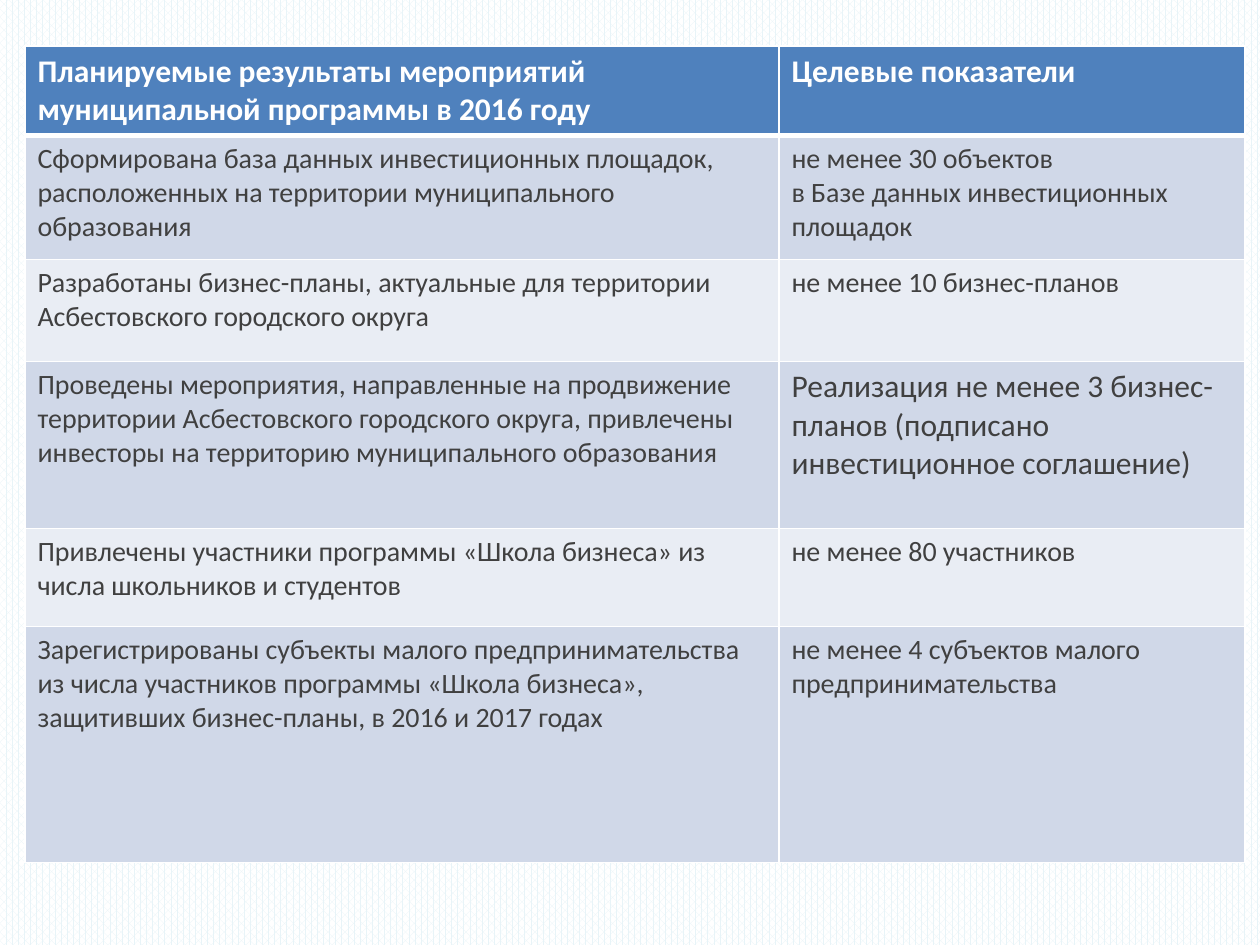
import lxml.etree
import pptx
import pptx.dml.color
import pptx.enum.dml
import pptx.oxml.ns
import pptx.util

EMU_PER_PX = 914400 / 126
SLIDE_WIDTH, SLIDE_HEIGHT = 1260, 945
FONT = "Calibri"
WHITE, HEADER_BLUE, TEXT_GREY = "FFFFFF", "4F81BD", "404040"
BANDS = ("D0D8E8", "E9EDF4")

COLUMN_WIDTHS = (754, 466)
HEADERS = (
    "Планируемые результаты мероприятий муниципальной программы в 2016 году",
    "Целевые показатели",
)
HEADER_HEIGHT = 88

# Row height, planned result, paragraphs of the target, target text size
RESULTS = (
    (124, "Сформирована база данных инвестиционных площадок, расположенных "
          "на территории муниципального образования",
     ("не менее 30 объектов", "в Базе данных инвестиционных площадок"), 16),
    (102, "Разработаны бизнес-планы, актуальные для территории "
          "Асбестовского городского округа",
     ("не менее 10 бизнес-планов",), 16),
    (167, "Проведены мероприятия, направленные на продвижение территории "
          "Асбестовского городского округа, привлечены инвесторы "
          "на территорию муниципального образования",
     ("Реализация не менее 3 бизнес-планов "
      "(подписано инвестиционное соглашение)",), 18),
    (98, "Привлечены участники программы «Школа бизнеса» "
         "из числа школьников и студентов",
     ("не менее 80 участников",), 16),
    (236, "Зарегистрированы субъекты малого предпринимательства "
          "из числа участников программы «Школа бизнеса», "
          "защитивших бизнес-планы, в 2016 и 2017 годах",
     ("не менее 4 субъектов малого предпринимательства",), 16),
)


def px(length):
    return pptx.util.Emu(round(length * EMU_PER_PX))


def color(hex_string):
    return pptx.dml.color.RGBColor.from_string(hex_string)


def set_borders(cell, top=1, bottom=1):
    """Draw white cell borders, with widths in points."""
    properties = cell._tc.get_or_add_tcPr()
    for side, width in (("L", 1), ("R", 1), ("T", top), ("B", bottom)):
        line = lxml.etree.SubElement(
            properties, pptx.oxml.ns.qn(f"a:ln{side}"), w=str(pptx.util.Pt(width)))
        fill = lxml.etree.SubElement(line, pptx.oxml.ns.qn("a:solidFill"))
        lxml.etree.SubElement(fill, pptx.oxml.ns.qn("a:srgbClr"), val=WHITE)


def write_cell(cell, paragraphs, size, text_color, fill_color, bold=False):
    cell.fill.solid()
    cell.fill.fore_color.rgb = color(fill_color)
    frame = cell.text_frame
    for index, text in enumerate(paragraphs):
        paragraph = frame.add_paragraph() if index else frame.paragraphs[0]
        run = paragraph.add_run()
        run.text = text
        run.font.name = FONT
        run.font.size = pptx.util.Pt(size)
        run.font.bold = bold
        run.font.color.rgb = color(text_color)


def add_background(slide):
    fill = slide.background.fill
    fill.patterned()
    fill.pattern = pptx.enum.dml.MSO_PATTERN.PERCENT_70
    fill.fore_color.rgb = color("E8F4F8")
    fill.back_color.rgb = color(WHITE)


def add_results_table(slide, left, top):
    heights = [HEADER_HEIGHT] + [result[0] for result in RESULTS]
    table = slide.shapes.add_table(
        len(heights), len(COLUMN_WIDTHS), px(left), px(top),
        px(sum(COLUMN_WIDTHS)), px(sum(heights))).table
    table.horz_banding = False
    for column, width in zip(table.columns, COLUMN_WIDTHS):
        column.width = px(width)
    for row, height in zip(table.rows, heights):
        row.height = px(height)

    # Header row, with a heavier rule below it
    for cell, title in zip(table.rows[0].cells, HEADERS):
        set_borders(cell, bottom=3)
        write_cell(cell, (title,), 18, WHITE, HEADER_BLUE, bold=True)

    # Banded result rows
    for index, (_, result, target, target_size) in enumerate(RESULTS):
        band = BANDS[index % 2]
        contents = (((result,), 16), (target, target_size))
        for cell, (paragraphs, size) in zip(table.rows[index + 1].cells, contents):
            set_borders(cell, top=1 if index else 3)
            write_cell(cell, paragraphs, size, TEXT_GREY, band)


def main():
    presentation = pptx.Presentation()
    presentation.slide_width = px(SLIDE_WIDTH)
    presentation.slide_height = px(SLIDE_HEIGHT)
    slide = presentation.slides.add_slide(presentation.slide_layouts[6])
    add_background(slide)
    add_results_table(slide, 25, 46)
    presentation.save("out.pptx")


if __name__ == "__main__":
    main()
